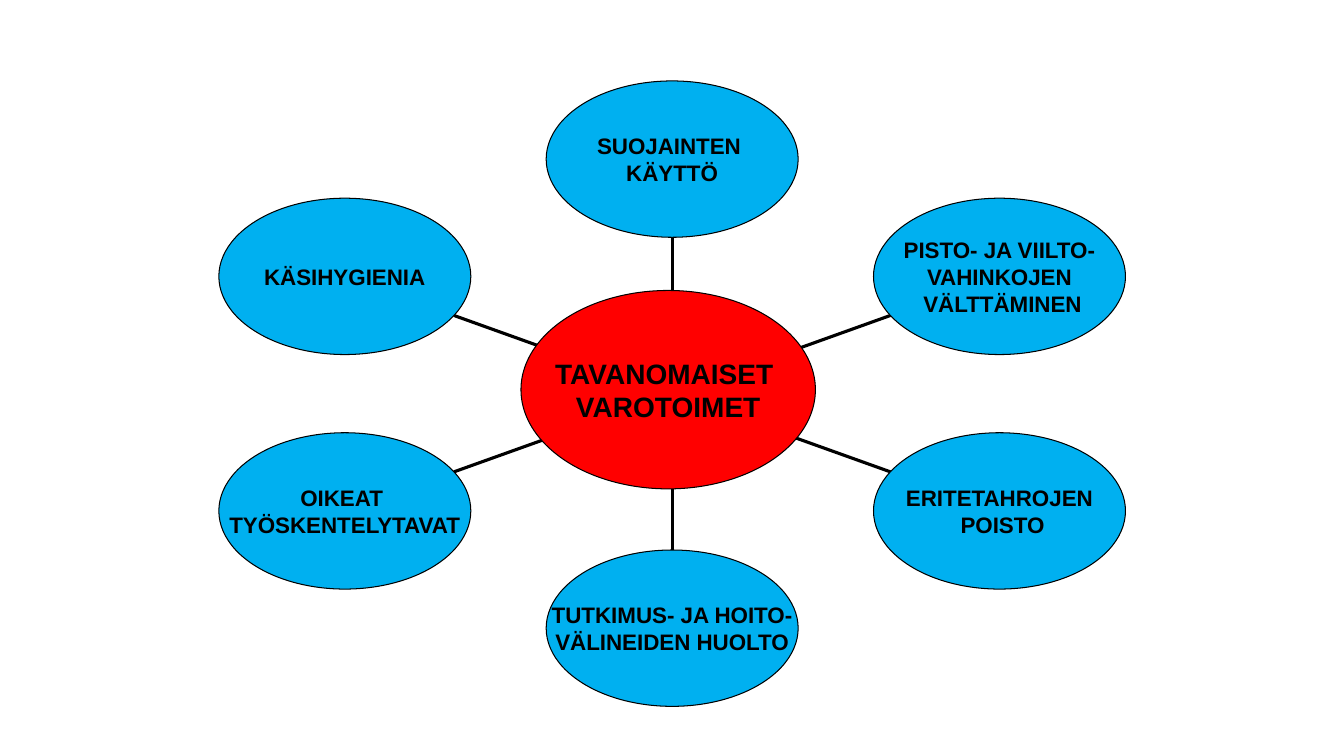
"""Build a hub-and-spoke slide about standard infection precautions."""
from dataclasses import dataclass
from math import cos, radians, sin

from lxml import etree
from pptx import Presentation
from pptx.dml.color import RGBColor
from pptx.enum.shapes import MSO_CONNECTOR, MSO_SHAPE
from pptx.enum.text import MSO_ANCHOR, PP_ALIGN
from pptx.oxml.ns import qn
from pptx.slide import Slide
from pptx.util import Cm, Pt

OVAL = MSO_SHAPE.OVAL
STRAIGHT = MSO_CONNECTOR.STRAIGHT
MIDDLE = MSO_ANCHOR.MIDDLE
CENTER = PP_ALIGN.CENTER

FONT = "Arial"
BLACK = "000000"
BLUE = "00B0F0"
RED = "FF0000"

ORBIT_X, ORBIT_Y = 16.94, 9.92
MEASURE_WIDTH, MEASURE_HEIGHT = 6.35, 3.94
SPOKE_START, SPOKE_END, MEASURE_DISTANCE = 1, 2, 3
ANGLE_STEP = 60


@dataclass
class Bubble:
    """An ellipse with centred lines of text, measured in centimetres."""

    lines: list[str]
    center_x: float
    center_y: float
    width: float = MEASURE_WIDTH
    height: float = MEASURE_HEIGHT
    fill: str = BLUE
    size: int = 16


HUB = Bubble(["TAVANOMAISET ", "VAROTOIMET"], 16.84, 9.82, 7.42, 5.0, RED, 20)

MEASURES = [
    ["SUOJAINTEN ", "KÄYTTÖ"],
    ["PISTO- JA VIILTO-", "VAHINKOJEN", " VÄLTTÄMINEN"],
    ["ERITETAHROJEN", " POISTO"],
    ["TUTKIMUS- JA HOITO-", "VÄLINEIDEN HUOLTO"],
    ["OIKEAT ", "TYÖSKENTELYTAVAT"],
    ["KÄSIHYGIENIA"],
]


def color(code: str) -> RGBColor:
    """Turn a hex string into a colour."""
    return RGBColor.from_string(code)


def orbit_point(angle: float, distance: float) -> tuple[float, float]:
    """Return the point at a clockwise angle, in measure half-sizes from the middle."""
    turn = radians(angle)
    return (
        ORBIT_X + distance * MEASURE_WIDTH / 2 * sin(turn),
        ORBIT_Y - distance * MEASURE_HEIGHT / 2 * cos(turn),
    )


def add_spoke(page: Slide, angle: float) -> None:
    """Draw the line from the hub to the measure at an angle."""
    start_x, start_y = orbit_point(angle, SPOKE_START)
    end_x, end_y = orbit_point(angle, SPOKE_END)
    spoke = page.shapes.add_connector(
        STRAIGHT, Cm(start_x), Cm(start_y), Cm(end_x), Cm(end_y)
    )
    spoke.line.color.rgb = color(BLACK)
    spoke.line.width = Pt(2.25)
    etree.SubElement(spoke.element.spPr, qn("a:effectLst"))


def add_bubble(page: Slide, bubble: Bubble) -> None:
    """Draw an ellipse with its text."""
    oval = page.shapes.add_shape(
        OVAL,
        Cm(bubble.center_x - bubble.width / 2),
        Cm(bubble.center_y - bubble.height / 2),
        Cm(bubble.width),
        Cm(bubble.height),
    )
    oval.shadow.inherit = False
    oval.fill.solid()
    oval.fill.fore_color.rgb = color(bubble.fill)
    oval.line.color.rgb = color(BLACK)
    oval.line.width = Pt(0.75)

    box = oval.text_frame
    box.word_wrap = False
    box.vertical_anchor = MIDDLE
    box.margin_left = box.margin_right = box.margin_top = box.margin_bottom = 0
    for index, line in enumerate(bubble.lines):
        para = box.add_paragraph() if index else box.paragraphs[0]
        para.alignment = CENTER
        span = para.add_run()
        span.text = line
        span.font.name = FONT
        span.font.size = Pt(bubble.size)
        span.font.bold = True
        span.font.color.rgb = color(BLACK)


def main() -> None:
    """Build and save the deck."""
    deck = Presentation()
    deck.slide_width, deck.slide_height = Cm(33.87), Cm(19.05)
    page = deck.slides.add_slide(deck.slide_layouts.get_by_name("Blank"))
    for index, lines in enumerate(MEASURES):
        angle = index * ANGLE_STEP
        add_spoke(page, angle)
        add_bubble(page, Bubble(lines, *orbit_point(angle, MEASURE_DISTANCE)))
    add_bubble(page, HUB)
    deck.save("out.pptx")


if __name__ == "__main__":
    main()
